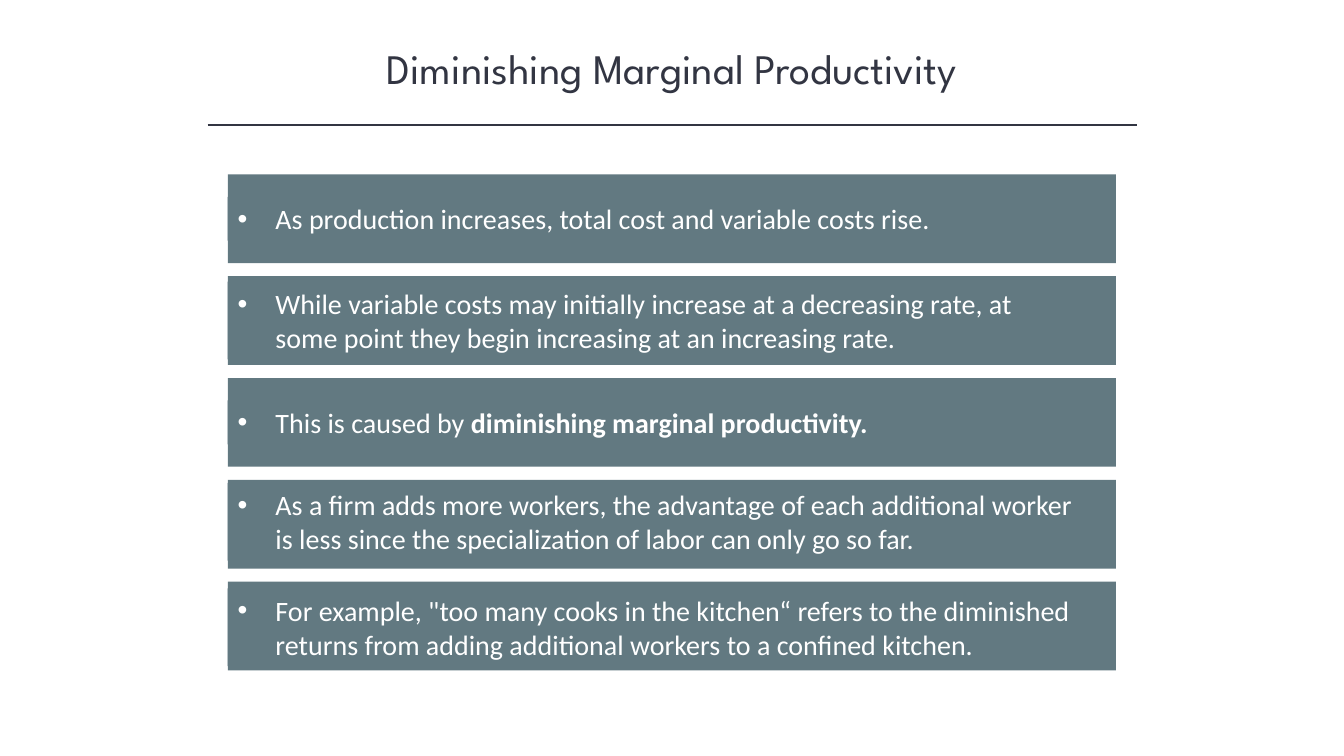
import pptx
import pptx.util
import pptx.dml.color
import pptx.enum.shapes
import pptx.enum.text
import pptx.oxml
import pptx.oxml.ns
from lxml import etree

Pt = pptx.util.Pt
KIND = pptx.enum.shapes.MSO_SHAPE
ALIGN = pptx.enum.text.PP_ALIGN

TITLE = "Diminishing Marginal Productivity"
ROWS = [
    {"runs": [("As production increases, total cost and variable costs rise.", False)],
     "lines": 1, "nudge": 0},
    {"runs": [("While variable costs may initially increase at a decreasing rate, at some point they begin increasing at an increasing rate.", False)],
     "lines": 2, "nudge": 0},
    {"runs": [("This is caused by ", False), ("diminishing marginal productivity.", True)],
     "lines": 1, "nudge": 0},
    {"runs": [("As a firm adds more workers, the advantage of each additional worker is less since the specialization of labor can only go so far.", False)],
     "lines": 2, "nudge": -1.7},
    {"runs": [("For example, \"too many cooks in the kitchen“ refers to the diminished returns from adding additional workers to a confined kitchen.", False)],
     "lines": 2, "nudge": 1},
]
COLORS = {"ink": "323542", "bar": "627981", "white": "FFFFFF"}
LEFT, TOP, WIDTH, HEIGHT = 162.7, 124.6, 634.3, 63.4
PITCH, INNER = 72.7, 614.9
LINE, PAD = 24.2, 7.2


def tint(name):
    return pptx.dml.color.RGBColor.from_string(COLORS[name])


def write(shape, runs, font="Calibri", size=20, color="white", align=ALIGN.LEFT, indent=0):
    frame = shape.text_frame
    frame.word_wrap = True
    frame.vertical_anchor = pptx.enum.text.MSO_ANCHOR.TOP
    para = frame.paragraphs[0]
    para.alignment = align
    for text, bold in runs:
        run = para.add_run()
        run.text = text
        run.font.name = font
        run.font.size = Pt(size)
        run.font.bold = bold
        run.font.color.rgb = tint(color)
    if indent:
        props = para._p.get_or_add_pPr()
        props.set("marL", str(Pt(indent)))
        props.set("indent", str(-Pt(indent)))
        face = etree.SubElement(props, pptx.oxml.ns.qn("a:buFont"))
        face.set("typeface", "Arial")
        mark = etree.SubElement(props, pptx.oxml.ns.qn("a:buChar"))
        mark.set("char", "•")


def block(group, top, width, height):
    shape = group.shapes.add_shape(KIND.RECTANGLE, Pt(LEFT), Pt(top), Pt(width), Pt(height))
    shape.shadow.inherit = False
    shape.fill.solid()
    shape.fill.fore_color.rgb = tint("bar")
    shape.line.fill.background()
    return shape


def main():
    deck = pptx.Presentation()
    deck.slide_width, deck.slide_height = Pt(960), Pt(540)
    slide = deck.slides.add_slide(deck.slide_layouts[6])

    title = slide.shapes.add_textbox(Pt(120), Pt(26.6), Pt(720), Pt(43.9))
    write(title, [(TITLE, False)], font="League Spartan", size=30, color="ink", align=ALIGN.CENTER)

    rule = slide.shapes.add_connector(
        pptx.enum.shapes.MSO_CONNECTOR.STRAIGHT, Pt(148.3), Pt(89.3), Pt(812.2), Pt(89.3))
    rule.line.color.rgb = tint("ink")
    rule.line.width = Pt(1)
    etree.SubElement(rule._element.spPr, pptx.oxml.ns.qn("a:effectLst"))

    for i, row in enumerate(ROWS):
        top = TOP + i * PITCH
        group = slide.shapes.add_group_shape()
        block(group, top, WIDTH, HEIGHT)
        tall = row["lines"] * LINE + PAD
        label = block(group, top + (HEIGHT - tall) / 2 + row["nudge"], INNER, tall)
        write(label, row["runs"], indent=27)

    deck.save("out.pptx")


if __name__ == "__main__":
    main()
